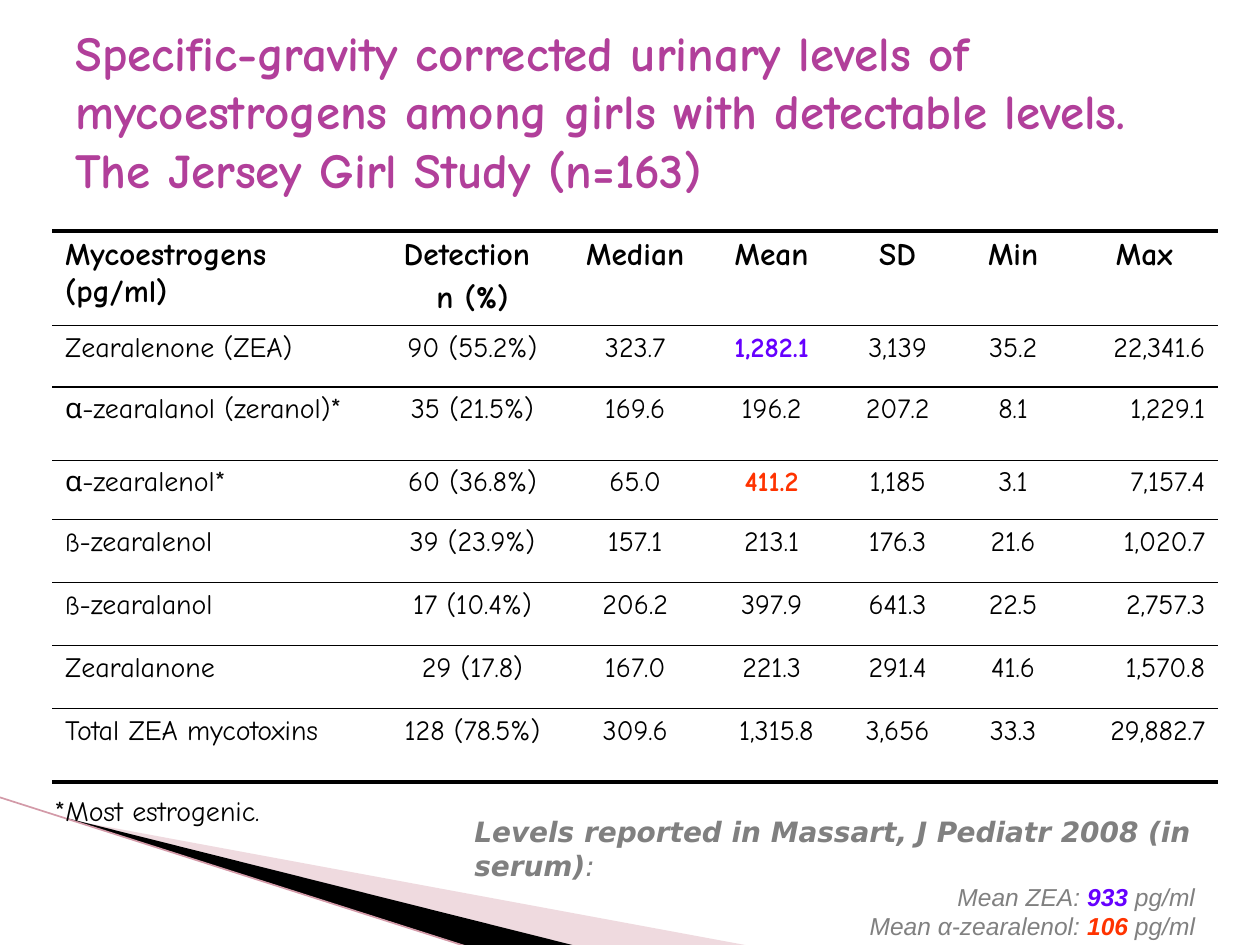
from pptx import Presentation
from pptx.dml.color import RGBColor
from pptx.enum import shapes, text
from pptx.oxml import parse_xml
from pptx.oxml import ns
from pptx.util import Pt

HUES = {
    "title": "B13F9A", "ink": "000000", "gray": "808080", "zea": "6600FF",
    "alpha": "FF3300", "blush": "D8A3AF", "edge": "D39AA8",
}
COMIC, SANS, ARIAL = "Comic Neue", "DejaVu Sans", "Arial"
LEFT, MID, RIGHT = text.PP_ALIGN.LEFT, text.PP_ALIGN.CENTER, text.PP_ALIGN.RIGHT

HEAD = ["Mycoestrogens (pg/ml)", "Detection \nn (%)", "Median", "Mean", "SD", "Min", "Max"]
ROWS = [
    ["Zearalenone (ZEA)", "90 (55.2%)", "323.7", "1,282.1", "3,139", "35.2", "22,341.6"],
    ["α-zearalanol (zeranol)*", "35 (21.5%)", "169.6", "196.2", "207.2", "8.1", "1,229.1"],
    ["α-zearalenol*", "60 (36.8%)", "65.0", "411.2", "1,185", "3.1", "7,157.4"],
    ["ß-zearalenol", "39 (23.9%)", "157.1", "213.1", "176.3", "21.6", "1,020.7"],
    ["ß-zearalanol", "17 (10.4%)", "206.2", "397.9", "641.3", "22.5", "2,757.3"],
    ["Zearalanone", "29 (17.8)", "167.0", "221.3", "291.4", "41.6", "1,570.8"],
    ["Total ZEA mycotoxins", "128 (78.5%)", "309.6", " 1,315.8", "3,656", "33.3", "29,882.7"],
]
WIDTHS = [186, 108, 78, 78, 66, 66, 84]
HEIGHTS = [36, 35, 42, 34, 36, 36, 36, 42]
MARKS = {(1, 3): "zea", (3, 3): "alpha"}  # highlighted means


def rgb(hue):
    return RGBColor.from_string(HUES[hue])


def add_run(para, words, size, face=COMIC, hue="ink", bold=False, slant=False):
    run = para.add_run()
    run.text = words
    font = run.font
    font.size, font.name, font.bold, font.italic = Pt(size), face, bold, slant
    font.color.rgb = rgb(hue)


def add_box(slide, left, top, width, height, wrap=True):
    box = slide.shapes.add_textbox(Pt(left), Pt(top), Pt(width), Pt(height))
    box.text_frame.word_wrap = wrap
    return box.text_frame


def add_wedge(slide, points, hue, alpha=None):
    first, *rest = [(Pt(x), Pt(y)) for x, y in points]
    pen = slide.shapes.build_freeform(*first)
    pen.add_line_segments(rest)
    wedge = pen.convert_to_shape()
    wedge.shadow.inherit = False
    wedge.line.fill.background()
    wedge.fill.solid()
    wedge.fill.fore_color.rgb = rgb(hue)
    if alpha:
        color = wedge.fill._xPr.find(".//" + ns.qn("a:srgbClr"))
        color.append(parse_xml(f'<a:alpha {ns.nsdecls("a")} val="{alpha * 1000}"/>'))


def add_line(slide, start, end, hue, width):
    line = slide.shapes.add_connector(
        shapes.MSO_CONNECTOR.STRAIGHT, *[Pt(n) for n in start + end])
    line.line.color.rgb = rgb(hue)
    line.line.width = Pt(width)
    line._element.spPr.append(parse_xml(f'<a:effectLst {ns.nsdecls("a")}/>'))


def set_rules(cell, above, below):
    """Rule a cell above and below, and leave its sides open."""
    props = cell._tc.get_or_add_tcPr()
    for spot, (side, width) in enumerate(
            [("lnL", 0), ("lnR", 0), ("lnT", above), ("lnB", below)]):
        fill = (f'<a:solidFill><a:srgbClr val="{HUES["ink"]}"/></a:solidFill>'
                if width else "<a:noFill/>")
        props.insert(spot, parse_xml(
            f'<a:{side} {ns.nsdecls("a")} w="{Pt(width)}">{fill}</a:{side}>'))


def fill_cell(cell, words, align, size, hue, bold):
    cell.fill.background()
    for n, part in enumerate(words.split("\n")):
        frame = cell.text_frame
        para = frame.add_paragraph() if n else frame.paragraphs[0]
        para.alignment = align
        if n:
            para.space_before = Pt(size * 0.2)
        add_run(para, part, size, hue=hue, bold=bold)


def add_levels(slide):
    grid = [HEAD] + ROWS
    last = len(grid) - 1
    table = slide.shapes.add_table(
        len(grid), len(HEAD), Pt(30), Pt(132), Pt(sum(WIDTHS)), Pt(sum(HEIGHTS))).table
    table.horz_banding = table.first_row = False
    for col, width in zip(table.columns, WIDTHS):
        col.width = Pt(width)
    for r, row in enumerate(grid):
        table.rows[r].height = Pt(HEIGHTS[r])
        for c, words in enumerate(row):
            cell = table.cell(r, c)
            align = LEFT if c == 0 else RIGHT if c == 6 and r else MID
            fill_cell(cell, words, align, 16 if r else 18,
                      MARKS.get((r, c), "ink"), r == 0 or (r, c) in MARKS)
            set_rules(cell, 1 if r else 2.25, 2.25 if r == last else 1)


def add_serum(slide):
    frame = add_box(slide, 264, 462, 426, 60.5)
    para = frame.paragraphs[0]
    add_run(para, "Levels reported in Massart, J Pediatr 2008 (in serum)",
            16, SANS, "gray", True, True)
    add_run(para, ":", 16, SANS, "gray", slant=True)
    for label, value, unit, hue in [("Mean ZEA: ", "933", " pg/ml", "zea"),
                                    ("Mean α-zearalenol: ", "106 ", "pg/ml", "alpha")]:
        para = frame.add_paragraph()
        para.alignment = RIGHT
        add_run(para, label, 14, ARIAL, "gray", slant=True)
        add_run(para, value, 14, ARIAL, hue, True, True)
        add_run(para, unit, 14, ARIAL, "gray", slant=True)


def main():
    deck = Presentation()
    deck.slide_width, deck.slide_height = Pt(720), Pt(540)
    slide = deck.slides.add_slide(deck.slide_layouts[6])

    # Corner decoration
    add_wedge(slide, [(39.6, 468.5), (428.5, 540.5), (328.5, 540.5), (39.6, 468)], "blush", 40)
    add_wedge(slide, [(38.2, 467.5), (329, 540.5), (268, 541), (38.9, 468)], "ink")
    add_line(slide, (-0.5, 455.5), (267, 541), "edge", 0.95)

    # Title
    frame = add_box(slide, 36, 18, 648, 90)
    frame.vertical_anchor = text.MSO_ANCHOR.MIDDLE
    add_run(frame.paragraphs[0],
            "Specific-gravity corrected urinary levels of mycoestrogens among girls "
            "with detectable levels. The Jersey Girl Study (n=163)",
            28, hue="title", bold=True)

    # Table and notes below it
    add_levels(slide)
    note = add_box(slide, 24, 450, 148, 26.5, wrap=False)
    add_run(note.paragraphs[0], "*Most estrogenic.", 16)
    add_serum(slide)

    deck.save("out.pptx")


if __name__ == "__main__":
    main()
